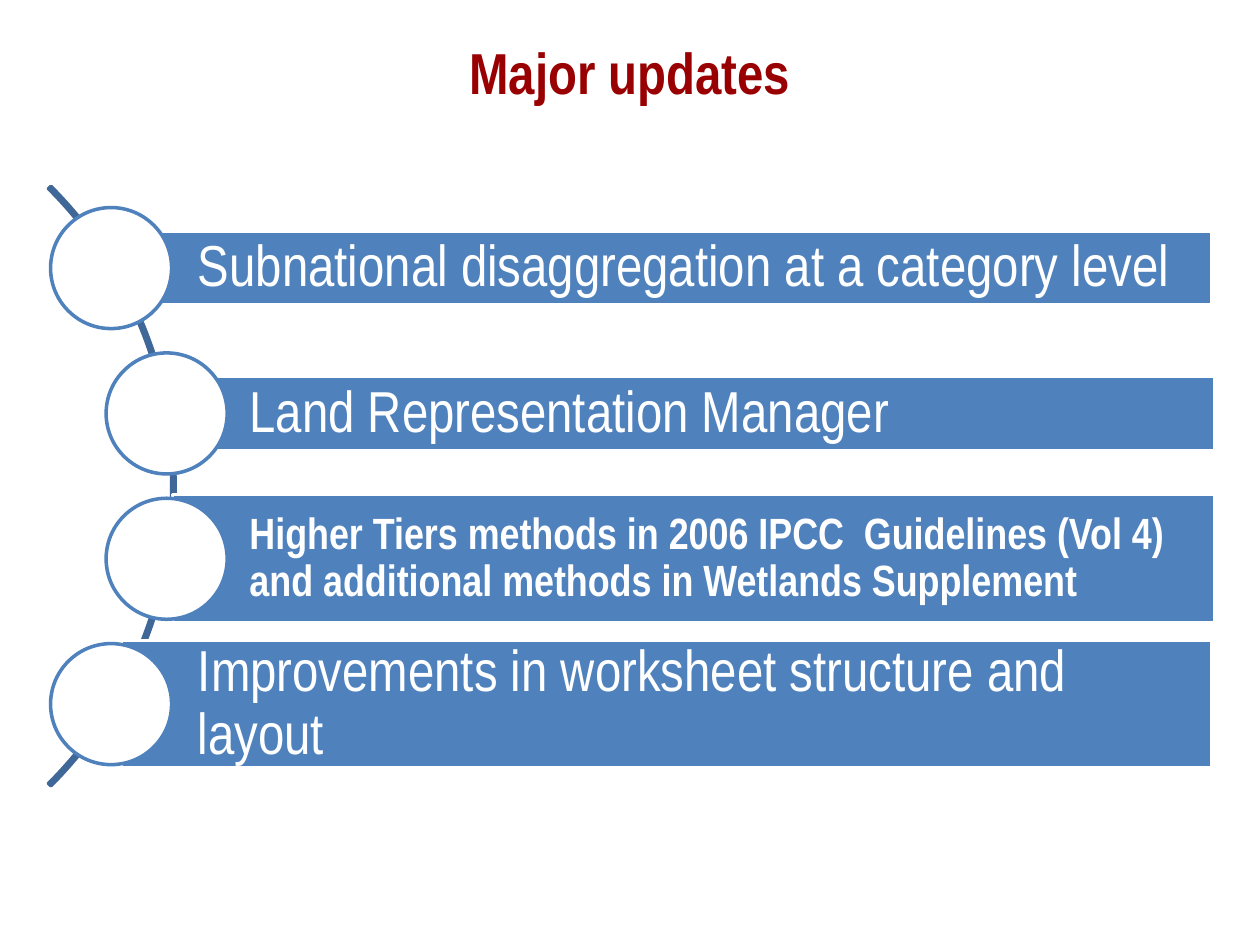
from pptx import Presentation
from pptx.dml.color import RGBColor
from pptx.enum.shapes import MSO_SHAPE as Shape
from pptx.enum.text import MSO_ANCHOR as Anchor, MSO_AUTO_SIZE as AutoSize, PP_ALIGN as Align
from pptx.util import Cm, Pt

FONT = "Arial Narrow"
RED = RGBColor(0x99, 0x00, 0x02)
WHITE = RGBColor(0xFF, 0xFF, 0xFF)
BLUE = RGBColor(0x4F, 0x81, 0xBD)
DARK_BLUE = RGBColor(0x3F, 0x67, 0x97)

# text, circle centre, bar left, bar right, bar height (cm from the list's left), size, bold
UPDATES = [
    ("Subnational disaggregation at a category level", 1.22, 1.42, 23.41, 1.5, 33, False),
    ("Land Representation Manager", 2.34, 2.46, 23.47, 1.5, 33, False),
    ("Higher Tiers methods in 2006 IPCC  Guidelines (Vol 4) "
     "and additional methods in Wetlands Supplement", 2.34, 2.46, 23.47, 2.59, 25, True),
    ("Improvements in worksheet structure and layout", 1.22, 1.42, 23.41, 2.57, 33, False),
]
CIRCLE = 2.44
PITCH = 2.93
ARC_SIZE = 17.09


def style_font(paragraph, size, color, bold):
    font = paragraph.runs[0].font
    font.name, font.size, font.bold = FONT, Pt(size), bold
    font.color.rgb = color


def add_outlined(slide, preset, left, top, width, height, line, fill=None):
    shape = slide.shapes.add_shape(preset, Cm(left), Cm(top), Cm(width), Cm(height))
    shape.shadow.inherit = False
    if fill is None:
        shape.fill.background()
    else:
        shape.fill.solid()
        shape.fill.fore_color.rgb = fill
    shape.line.color.rgb = line
    shape.line.width = Pt(2)
    return shape


def add_title(slide, left, top, width, height):
    title = slide.shapes.title
    title.left, title.top, title.width, title.height = map(Cm, (left, top, width, height))
    frame = title.text_frame
    frame.text = "Major updates"
    frame.auto_size = AutoSize.NONE
    frame.vertical_anchor = Anchor.MIDDLE
    paragraph = frame.paragraphs[0]
    paragraph.alignment = Align.CENTER
    style_font(paragraph, 33, RED, True)


def add_bar(slide, left, top, width, height, text, size, bold):
    bar = add_outlined(slide, Shape.RECTANGLE, left, top, width, height, WHITE, BLUE)
    frame = bar.text_frame
    frame.text = text
    frame.word_wrap = True
    frame.vertical_anchor = Anchor.MIDDLE
    frame.margin_left = Cm(1.55)
    frame.margin_top = frame.margin_right = frame.margin_bottom = Cm(0.2)
    paragraph = frame.paragraphs[0]
    paragraph.alignment = Align.LEFT
    paragraph.line_spacing = 0.9
    style_font(paragraph, size, WHITE, bold)


def add_update_list(slide, left, middle):
    """Place the curved list with its rows spread evenly about the middle height."""
    arc = add_outlined(slide, Shape.BLOCK_ARC, left - 14.58, middle - ARC_SIZE / 2,
                       ARC_SIZE, ARC_SIZE, DARK_BLUE)
    # Angles in units of 100000/60000 degree: from 315 to 45 degrees
    for index, value in enumerate((189, 27, 0.004)):
        arc.adjustments[index] = value

    first = middle - PITCH * (len(UPDATES) - 1) / 2
    for row, (text, centre, start, end, height, size, bold) in enumerate(UPDATES):
        y = first + row * PITCH
        add_bar(slide, left + start, y - height / 2, end - start, height, text, size, bold)
        add_outlined(slide, Shape.OVAL, left + centre - CIRCLE / 2, y - CIRCLE / 2,
                     CIRCLE, CIRCLE, BLUE, WHITE)


def main():
    presentation = Presentation()
    presentation.slide_width, presentation.slide_height = Cm(25.4), Cm(19.05)
    slide = presentation.slides.add_slide(presentation.slide_layouts[5])
    add_title(slide, 0, 0.66, 25.4, 1.55)
    add_update_list(slide, 1.02, 9.8)
    presentation.save("out.pptx")


if __name__ == "__main__":
    main()
